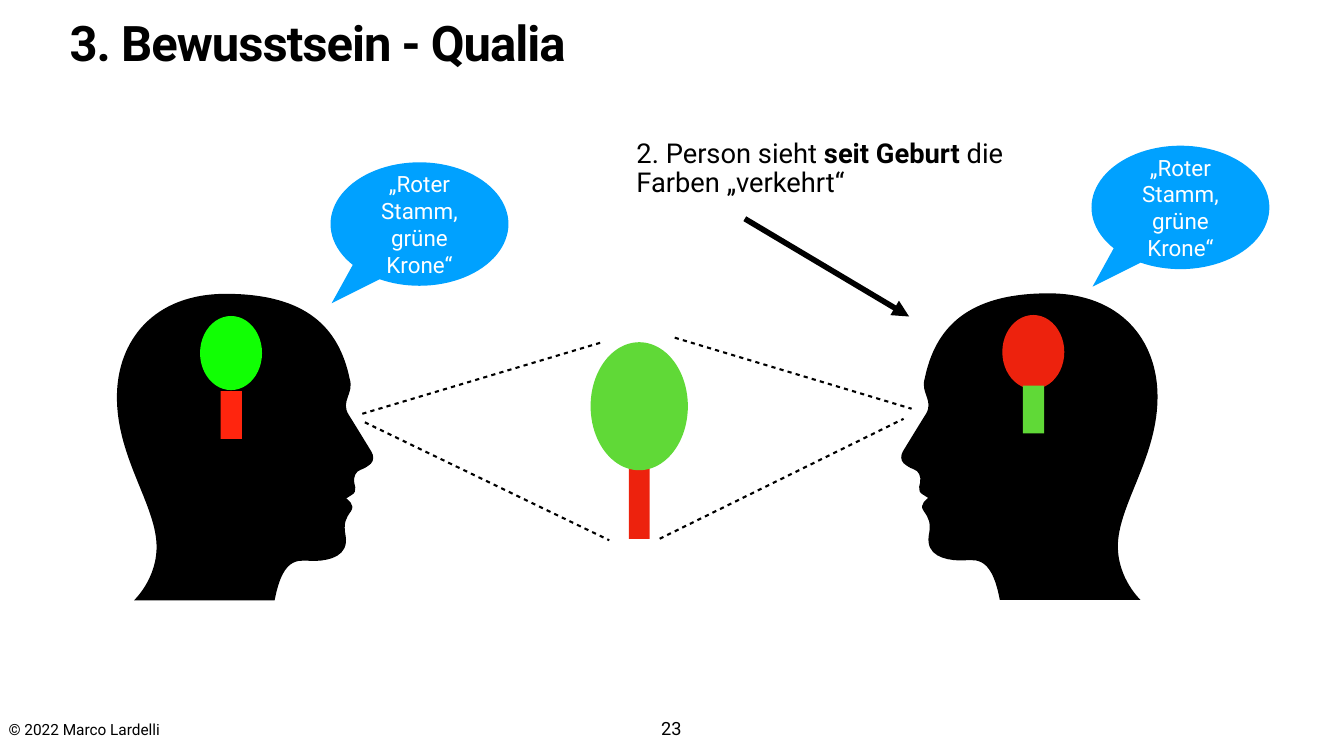
from typing import NamedTuple

from lxml import etree
from pptx import Presentation
from pptx.dml.color import RGBColor
from pptx.enum import shapes as kinds, text as txt
from pptx.oxml import ns
from pptx.util import Inches, Pt

FONT = "Roboto"
BLACK, WHITE, BLUE = "000000", "FFFFFF", "00A1FF"
RED, GREEN = "ED220D", "60D937"
OVAL, RECT = kinds.MSO_SHAPE.OVAL, kinds.MSO_SHAPE.RECTANGLE
BUBBLE = kinds.MSO_SHAPE.OVAL_CALLOUT
LEFT, MID = txt.PP_ALIGN.LEFT, txt.PP_ALIGN.CENTER
TOP, CENTRE, LOW = (txt.MSO_ANCHOR.TOP, txt.MSO_ANCHOR.MIDDLE,
                    txt.MSO_ANCHOR.BOTTOM)


class Box(NamedTuple):
    x: float
    y: float
    w: float
    h: float


class Part(NamedTuple):
    kind: kinds.MSO_SHAPE
    box: Box
    code: str


class Run(NamedTuple):
    text: str
    bold: bool = False


# Head facing right: each row is a straight point or a cubic curve.
FACE = Box(2.32, 5.83, 5.08, 6.08)
START = (4.48, 5.83)
HEAD = [
    (3.05, 5.83, 2.32, 6.76, 2.32, 7.88),
    (2.32, 8.99, 2.97, 9.85, 3.09, 10.63),
    (3.21, 11.4, 2.66, 11.91, 2.66, 11.91),
    (5.45, 11.91),
    (5.63, 10.96, 5.97, 11.14, 6.26, 11.13),
    (6.55, 11.12, 6.92, 11.03, 6.86, 10.64),
    (6.81, 10.38, 6.86, 10.29, 6.96, 10.15),
    (7.07, 10.01, 6.87, 9.89, 6.87, 9.89),
    (6.98, 9.82),
    (7.04, 9.79, 7.06, 9.73, 7.05, 9.67),
    (7.04, 9.64, 7.04, 9.61, 7.03, 9.58),
    (7.01, 9.46, 7.06, 9.35, 7.16, 9.32),
    (7.25, 9.29, 7.31, 9.24, 7.36, 9.2),
    (7.42, 9.14, 7.42, 9.04, 7.37, 8.96),
    (7.21, 8.7, 7.04, 8.42, 6.92, 8.23),
    (6.75, 7.96, 7.03, 7.81, 6.94, 7.52),
    (6.73, 6.51, 6.09, 5.83, 4.48, 5.83),
]

TREE = [
    Part(RECT, Box(12.48, 9.3, 0.41, 1.39), RED),
    Part(OVAL, Box(11.72, 6.79, 1.93, 2.54), GREEN),
]
IDEAS = [
    Part(OVAL, Box(3.97, 6.27, 1.23, 1.47), "11FF04"),
    Part(RECT, Box(4.38, 7.76, 0.42, 0.95), "FF250E"),
    Part(OVAL, Box(19.89, 6.25, 1.23, 1.47), RED),
    Part(RECT, Box(20.3, 7.65, 0.42, 0.95), GREEN),
]
SIGHT_LEFT = [(7.24, 8.38, 12.09, 10.72), (7.19, 8.21, 11.95, 6.79)]
SIGHT_RIGHT = [(13.39, 6.7, 18.09, 8.11), (13.09, 10.69, 17.93, 8.31)]


def rgb(code: str) -> RGBColor:
    return RGBColor.from_string(code)


def paint(shape, code: str) -> None:
    shape.shadow.inherit = False
    shape.fill.solid()
    shape.fill.fore_color.rgb = rgb(code)
    shape.line.fill.background()


def add(slide, part: Part):
    shape = slide.shapes.add_shape(part.kind, *map(Inches, part.box))
    paint(shape, part.code)
    return shape


def write(shape, runs: list[Run], size: float, code: str = BLACK,
          align=LEFT, anchor=CENTRE, lead: float = 1, wrap: bool = True):
    frame = shape.text_frame
    frame.word_wrap = wrap
    frame.vertical_anchor = anchor
    frame.margin_left = frame.margin_right = Inches(0.06)
    frame.margin_top = frame.margin_bottom = Inches(0.06)
    para = frame.paragraphs[0]
    para.alignment, para.line_spacing = align, lead
    font = para.font
    font.name, font.size, font.color.rgb = FONT, Pt(size), rgb(code)
    for part in runs:
        run = para.add_run()
        run.text = part.text
        if part.bold:
            run.font.bold = True
    return para


def label(slide, box: Box, runs: list[Run], size: float, **style):
    area = slide.shapes.add_textbox(*map(Inches, box))
    return write(area, runs, size, **style)


def trace(path, tag: str, row: tuple, flip: bool) -> None:
    """Add one step of the head outline to a path."""
    step = etree.SubElement(path, ns.qn(tag))
    for x, y in zip(row[::2], row[1::2]):
        x -= FACE.x
        etree.SubElement(step, ns.qn("a:pt"),
                         x=str(Inches(FACE.w - x if flip else x)),
                         y=str(Inches(y - FACE.y)))


def head(slide, x: float, y: float, flip: bool = False) -> None:
    wide, high = Inches(FACE.w), Inches(FACE.h)
    pen = slide.shapes.build_freeform()
    pen.add_line_segments([(wide, 0), (wide, high)])
    shape = pen.convert_to_shape()
    shape.left, shape.top = Inches(x), Inches(y)
    shape.width, shape.height = wide, high
    path = shape._element.spPr.find(".//" + ns.qn("a:path"))
    for step in list(path):
        path.remove(step)
    path.set("w", str(wide))
    path.set("h", str(high))
    trace(path, "a:moveTo", START, flip)
    for row in HEAD:
        tag = "a:lnTo" if len(row) == 2 else "a:cubicBezTo"
        trace(path, tag, row, flip)
    etree.SubElement(path, ns.qn("a:close"))
    paint(shape, BLACK)


def line(slide, ends: tuple, width: float, arrow: bool = False) -> None:
    link = slide.shapes.add_connector(
        kinds.MSO_CONNECTOR.STRAIGHT, *map(Inches, ends))
    link.line.color.rgb = rgb(BLACK)
    link.line.width = Pt(width)
    props = link._element.spPr
    ln = props.find(ns.qn("a:ln"))
    if arrow:
        etree.SubElement(ln, ns.qn("a:tailEnd"), type="triangle")
    else:
        dash = etree.SubElement(ln, ns.qn("a:custDash"))
        etree.SubElement(dash, ns.qn("a:ds"), d="200000", sp="200000")
    etree.SubElement(props, ns.qn("a:effectLst"))


def bubble(slide, x: float, y: float) -> None:
    shape = add(slide, Part(BUBBLE, Box(x, y, 3.53, 2.45), BLUE))
    shape.adjustments[0], shape.adjustments[1] = -0.494, 0.642
    write(shape, [Run("„Roter Stamm, grüne Krone“")], 32, WHITE, MID)


def main() -> None:
    deck = Presentation()
    deck.slide_width, deck.slide_height = Inches(26.67), Inches(15)
    slide = deck.slides.add_slide(deck.slide_layouts[6])

    label(slide, Box(0.11, 14.25, 3.15, 0.48),
          [Run("© 2022 Marco Lardelli")], 22, lead=0.9, wrap=False)
    title = label(slide, Box(1.32, 0.42, 24.03, 1.57),
                  [Run("3. Bewusstsein - Qualia", True)], 70,
                  anchor=TOP, lead=0.8)
    title.runs[0].font._element.set("spc", "-140")
    label(slide, Box(13.06, 14.17, 0.53, 0.55), [Run("23")], 26,
          align=MID, anchor=LOW, wrap=False)

    for part in TREE:
        add(slide, part)
    head(slide, FACE.x, FACE.y)
    for ends in SIGHT_LEFT:
        line(slide, ends, 3)
    head(slide, 17.89, 5.82, flip=True)
    for ends in SIGHT_RIGHT:
        line(slide, ends, 3)
    bubble(slide, 6.56, 3.22)
    bubble(slide, 21.66, 2.89)
    for part in IDEAS:
        add(slide, part)
    line(slide, (14.78, 4.34, 18.04, 6.28), 8, arrow=True)
    label(slide, Box(12.57, 2.7, 7.42, 1.32),
          [Run("2. Person sieht "), Run("seit Geburt", True),
           Run(" die Farben „verkehrt“")], 39, lead=0.9)
    deck.save("out.pptx")


if __name__ == "__main__":
    main()
